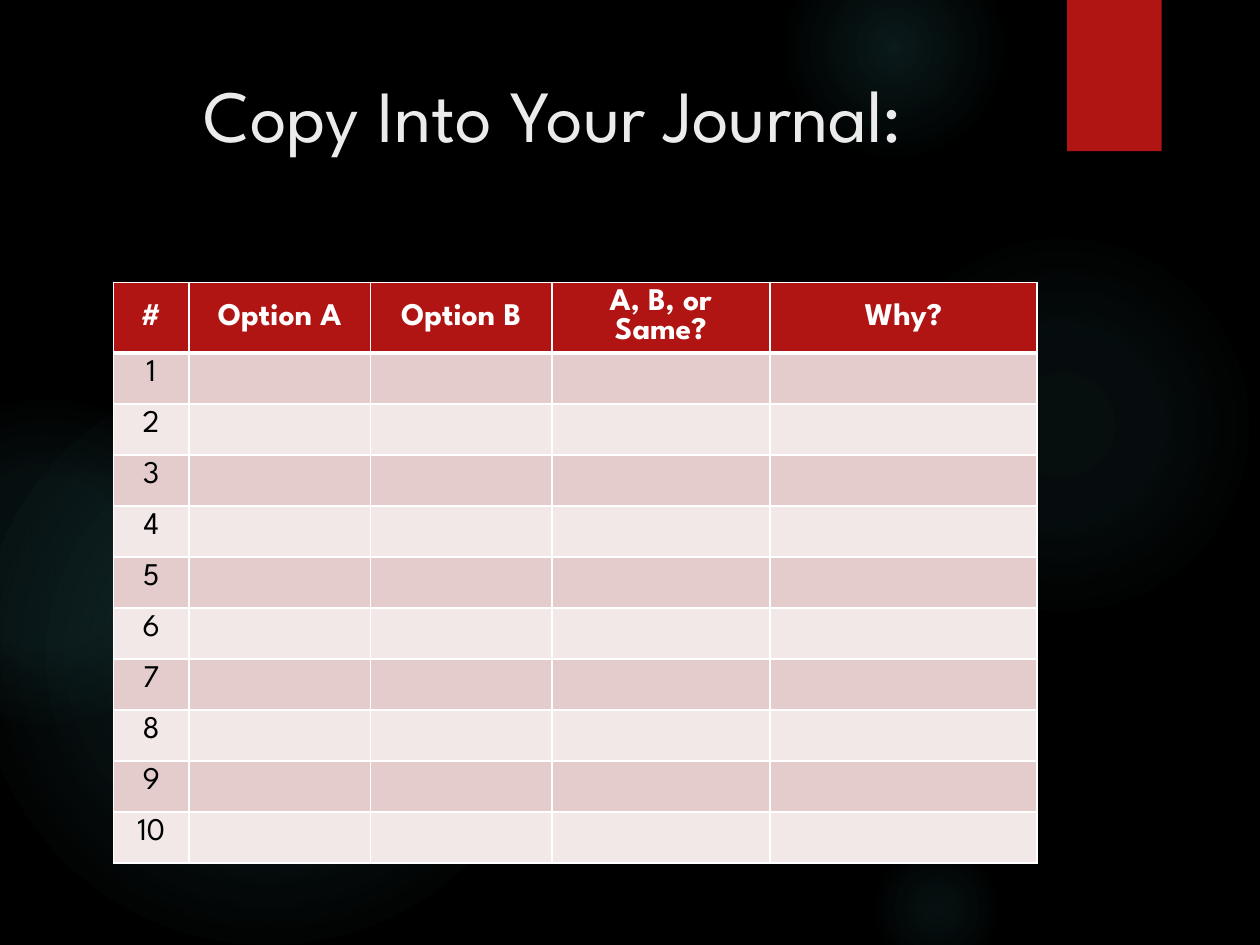
from pptx import Presentation, util as u
from pptx.dml.color import RGBColor
from pptx.enum import shapes, text
from pptx.oxml import parse_xml
from pptx.oxml.ns import nsdecls

TITLE = "Copy Into Your Journal:"
HEADERS = ["#", "Option A", "Option B", "A, B, or Same?", "Why?"]
COLUMN_WIDTHS = [0.6, 1.44, 1.44, 1.73, 2.12]
QUESTIONS = 10
ROW_HEIGHT = 0.405
GLOWS = [
    (6.89, 1.83, 3.08, [(0, 7), (36, 6), (69, 0)]),
    (6.22, -0.5, 1.75, [(0, 14), (36, 7), (73, 0)]),
    (6.89, 6.67, 1.08, [(0, 9), (36, 5), (66, 0)]),
    (-0.17, 2.92, 4.58, [(0, 11), (36, 10), (75, 0)]),
    (-0.92, 3.17, 2.58, [(0, 8), (36, 8), (72, 0)]),
]
FONT = "League Spartan"
BLACK = RGBColor(0x00, 0x00, 0x00)
WHITE = RGBColor(0xFF, 0xFF, 0xFF)
RED = RGBColor(0xB0, 0x15, 0x13)
TEAL = RGBColor(0x50, 0xB9, 0xC1)
TITLE_GRAY = RGBColor(0xEB, 0xEB, 0xEB)
BANDS = [RGBColor(0xF2, 0xE8, 0xE7), RGBColor(0xE4, 0xCC, 0xCC)]


def add_plain(slide, kind, *box):
    shape = slide.shapes.add_shape(kind, *map(u.Inches, box))
    shape.shadow.inherit = False
    shape.line.fill.background()
    return shape


def add_glow(slide, left, top, size, stops):
    glow = add_plain(slide, shapes.MSO_SHAPE.OVAL, left, top, size, size)
    glow.fill.background()
    gradient = "".join(
        f'<a:gs pos="{position * 1000}"><a:srgbClr val="{TEAL}">'
        f'<a:alpha val="{alpha * 1000}"/></a:srgbClr></a:gs>'
        for position, alpha in stops)
    properties = glow.element.spPr
    properties.replace(properties.find("{*}noFill"), parse_xml(
        f'<a:gradFill {nsdecls("a")}><a:gsLst>{gradient}</a:gsLst><a:path path="circle">'
        '<a:fillToRect l="50000" t="50000" r="50000" b="50000"/></a:path></a:gradFill>'))


def add_ribbon(slide):
    ribbon = add_plain(slide, shapes.MSO_SHAPE.RECTANGLE, 8.47, 0, 0.75, 1.2)
    ribbon.fill.solid()
    ribbon.fill.fore_color.rgb = RED
    ribbon.element.spPr.find("{*}effectLst").append(parse_xml(
        f'<a:outerShdw {nsdecls("a")} blurRad="{u.Pt(3)}" dist="{u.Pt(2)}" dir="5400000">'
        f'<a:srgbClr val="{BLACK}"><a:alpha val="45000"/></a:srgbClr></a:outerShdw>'))


def style_text(frame, size, color, bold=False):
    paragraph = frame.paragraphs[0]
    paragraph.alignment = text.PP_ALIGN.CENTER
    for part in [paragraph, *paragraph.runs]:
        part.font.name = FONT
        part.font.size = u.Pt(size)
        part.font.bold = bold
        part.font.color.rgb = color


def add_title(slide):
    title = slide.shapes.title
    title.left, title.top, title.width, title.height = map(u.Inches, (0.53, 0.5, 7.72, 1.53))
    title.text_frame.text = TITLE
    title.text_frame.vertical_anchor = text.MSO_ANCHOR.TOP
    style_text(title.text_frame, 42, TITLE_GRAY)
    slide.shapes.element.append(title.element)


def set_borders(cell, widths):
    for index, (side, width) in enumerate(widths.items()):
        cell._tc.get_or_add_tcPr().insert(index, parse_xml(
            f'<a:ln{side} {nsdecls("a")} w="{u.Pt(width)}"><a:solidFill>'
            f'<a:srgbClr val="{WHITE}"/></a:solidFill></a:ln{side}>'))


def add_journal(slide):
    rows = [HEADERS] + [[str(n)] + [""] * (len(HEADERS) - 1) for n in range(1, QUESTIONS + 1)]
    frame = slide.shapes.add_table(
        len(rows), len(HEADERS), *map(u.Inches, (0.9, 2.24, 7.34, 4.76)))
    journal = frame.table
    for column, width in zip(journal.columns, COLUMN_WIDTHS):
        column.width = u.Inches(width)
    for r, row in enumerate(rows):
        journal.rows[r].height = u.Inches(ROW_HEIGHT)
        header = r == 0
        for c, value in enumerate(row):
            cell = journal.cell(r, c)
            cell.text_frame.text = value
            cell.vertical_anchor = text.MSO_ANCHOR.MIDDLE if header else text.MSO_ANCHOR.TOP
            style_text(cell.text_frame, 18, WHITE if header else BLACK, header)
            cell.fill.solid()
            cell.fill.fore_color.rgb = RED if header else BANDS[r % 2]
            set_borders(cell, {"L": 1, "R": 1, "T": 3 if r == 1 else 1, "B": 3 if header else 1})
    frame.height = u.Inches(4.76)


def main():
    deck = Presentation()
    deck.slide_width, deck.slide_height = u.Inches(10), u.Inches(7.5)
    slide = deck.slides.add_slide(deck.slide_layouts[5])
    slide.background.fill.solid()
    slide.background.fill.fore_color.rgb = BLACK
    for glow in GLOWS:
        add_glow(slide, *glow)
    add_ribbon(slide)
    add_title(slide)
    add_journal(slide)
    deck.save("out.pptx")


if __name__ == "__main__":
    main()
